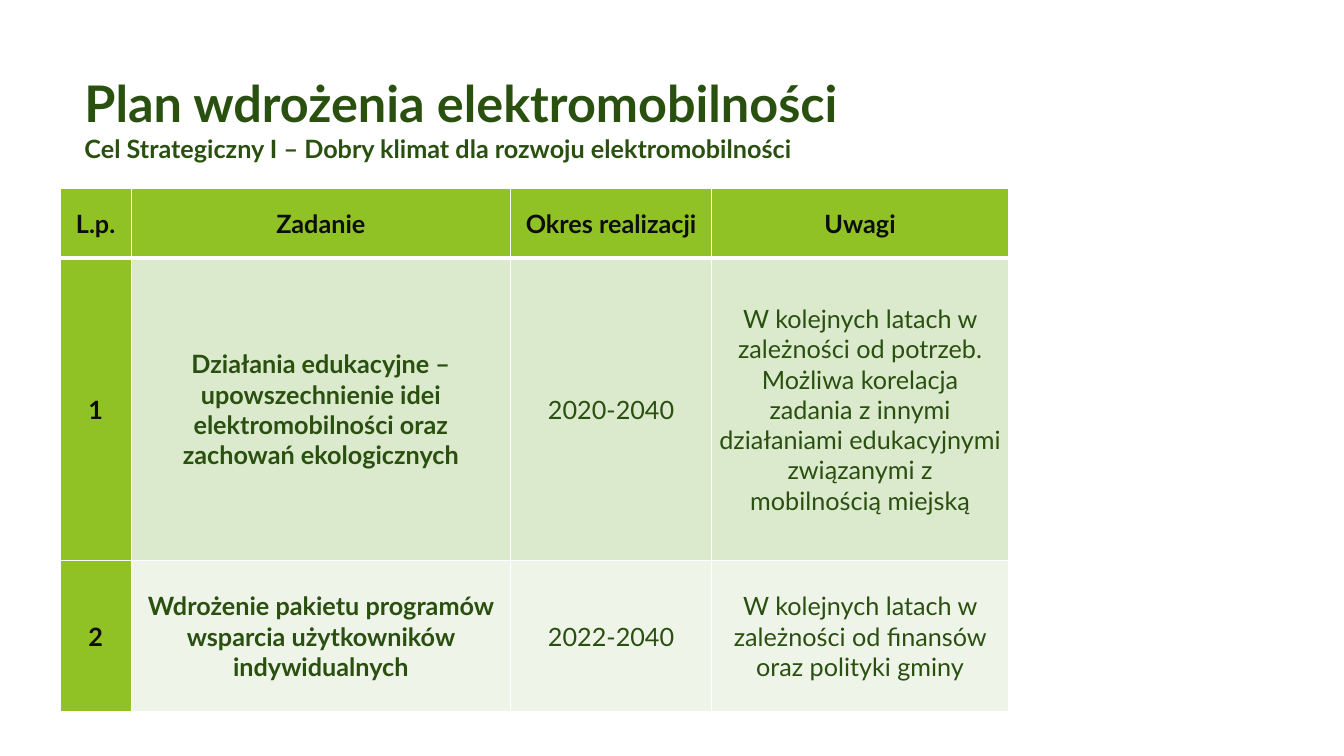
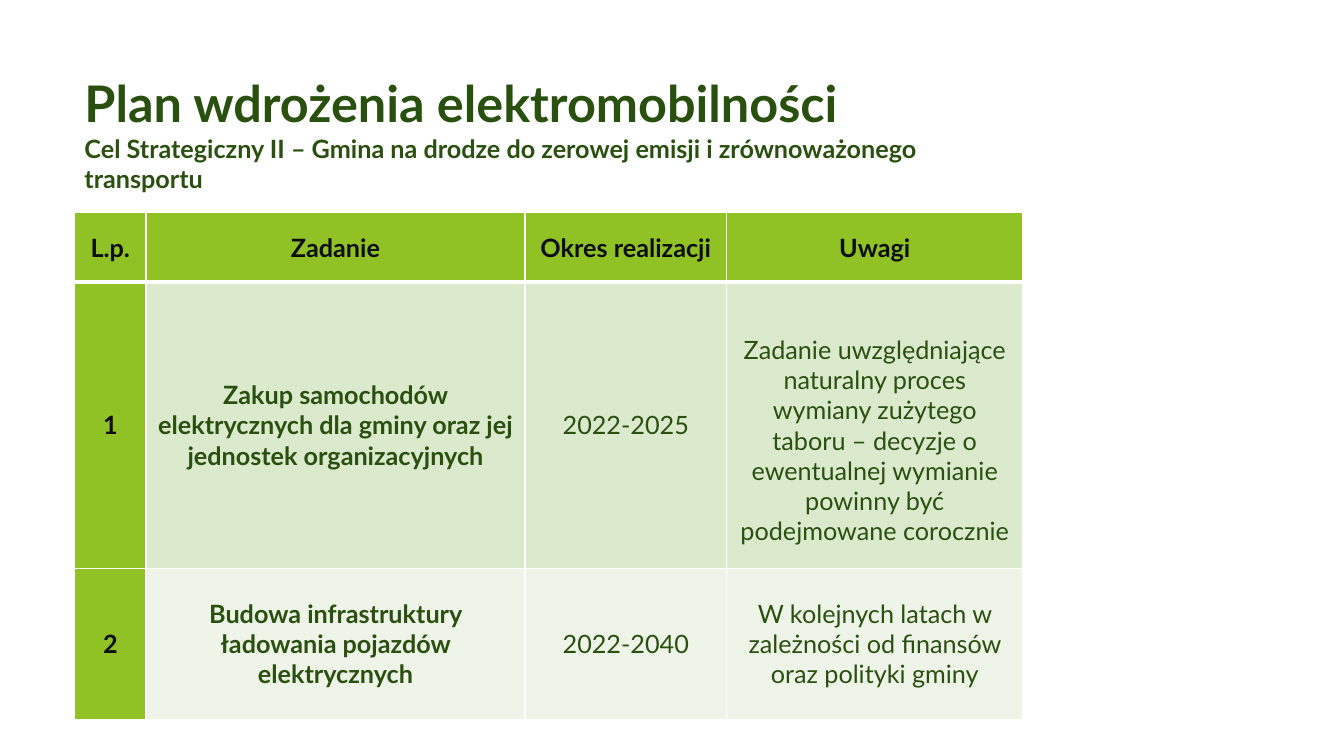
import pptx
import pptx.dml.color
import pptx.enum.text
import pptx.oxml.ns
import pptx.util
from lxml import etree
from pptx.util import Cm

COLORS = {
    "heading": "2A5010",
    "label": "0D0D0D",
    "accent": "90C226",
    "odd": "DBE9CD",
    "even": "EEF4E8",
    "border": "FFFFFF",
}
COLUMN_WIDTHS = (1.8, 9.55, 5.08, 7.47)
HEADER = ("L.p.", "Zadanie", "Okres realizacji", "Uwagi")


def rgb(name):
    return pptx.dml.color.RGBColor.from_string(COLORS[name])


class PlanDeck:
    font = "Lato"
    body_size = 18
    title_size = 36

    def __init__(self):
        self.deck = pptx.Presentation()
        self.deck.slide_width = Cm(33.87)
        self.deck.slide_height = Cm(19.05)
        self.page = None

    def add_page(self):
        self.page = self.deck.slides.add_slide(self.deck.slide_layouts[6])

    def style(self, para, size, color, bold):
        for span in para.runs:
            span.font.name = self.font
            span.font.size = pptx.util.Pt(size)
            span.font.bold = bold
            span.font.color.rgb = rgb(color)

    def add_title(self, title, subtitle):
        box = self.page.shapes.add_textbox(Cm(1.88), Cm(1.7), Cm(23.88), Cm(3.66))
        frame = box.text_frame
        frame.word_wrap = True
        frame.text = f"{title}\n{subtitle}"
        for para, size in zip(frame.paragraphs, (self.title_size, self.body_size)):
            self.style(para, size, "heading", True)

    def add_borders(self, cell, top, bottom):
        properties = cell._tc.get_or_add_tcPr()
        for side, width in (("L", 1), ("R", 1), ("T", top), ("B", bottom)):
            line = etree.SubElement(properties, pptx.oxml.ns.qn(f"a:ln{side}"), w=str(pptx.util.Pt(width)))
            fill = etree.SubElement(line, pptx.oxml.ns.qn("a:solidFill"))
            etree.SubElement(fill, pptx.oxml.ns.qn("a:srgbClr"), val=COLORS["border"])

    def fill_cell(self, cell, text, row, column):
        is_label = row == 0 or column == 0
        self.add_borders(cell, 3 if row == 1 else 1, 3 if row == 0 else 1)
        cell.fill.solid()
        cell.fill.fore_color.rgb = rgb("accent" if is_label else "odd" if row % 2 else "even")
        cell.margin_left = cell.margin_right = Cm(0.18)
        cell.margin_top = cell.margin_bottom = 0
        cell.vertical_anchor = pptx.enum.text.MSO_ANCHOR.MIDDLE
        cell.text_frame.text = text
        para = cell.text_frame.paragraphs[0]
        para.alignment = pptx.enum.text.PP_ALIGN.CENTER
        self.style(para, self.body_size, "label" if is_label else "heading", is_label or column == 1)

    def add_tasks(self, left, top, heights, tasks):
        rows = [HEADER] + [(str(number), *task) for number, task in enumerate(tasks, 1)]
        table = self.page.shapes.add_table(
            len(rows), len(HEADER), Cm(left), Cm(top), Cm(sum(COLUMN_WIDTHS)), Cm(sum(heights))
        ).table
        table.first_row = table.horz_banding = False
        for column, width in zip(table.columns, COLUMN_WIDTHS):
            column.width = Cm(width)
        for row, height in zip(table.rows, heights):
            row.height = Cm(height)
        for row, texts in enumerate(rows):
            for column, text in enumerate(texts):
                self.fill_cell(table.cell(row, column), text, row, column)
        return table


def main():
    plan = PlanDeck()
    title = "Plan wdrożenia elektromobilności"
    budget_note = "W kolejnych latach w zależności od finansów oraz polityki gminy"

    plan.add_page()
    plan.add_title(title, "Cel Strategiczny I – Dobry klimat dla rozwoju elektromobilności")
    plan.add_tasks(1.51, 4.76, (1.75, 7.62, 3.81), [
        ("Działania edukacyjne – upowszechnienie idei elektromobilności oraz zachowań ekologicznych",
         "2020-2040",
         "W kolejnych latach w zależności od potrzeb. Możliwa korelacja zadania z innymi "
         "działaniami edukacyjnymi związanymi z mobilnością miejską"),
        ("Wdrożenie pakietu programów wsparcia użytkowników indywidualnych", "2022-2040", budget_note),
    ])

    plan.add_page()
    plan.add_title(title, "Cel Strategiczny II – Gmina na drodze do zerowej emisji i zrównoważonego transportu")
    table = plan.add_tasks(1.88, 5.36, (1.75, 7.21, 3.81), [
        ("Zakup samochodów elektrycznych dla gminy oraz jej jednostek organizacyjnych",
         "2022-2025",
         "Zadanie uwzględniające naturalny proces wymiany zużytego taboru – decyzje o "
         "ewentualnej wymianie powinny być podejmowane corocznie"),
        ("Budowa infrastruktury ładowania pojazdów elektrycznych", "2022-2040", budget_note),
    ])
    table.cell(1, 3).margin_top = Cm(0.76)

    plan.deck.save("out.pptx")


if __name__ == "__main__":
    main()
